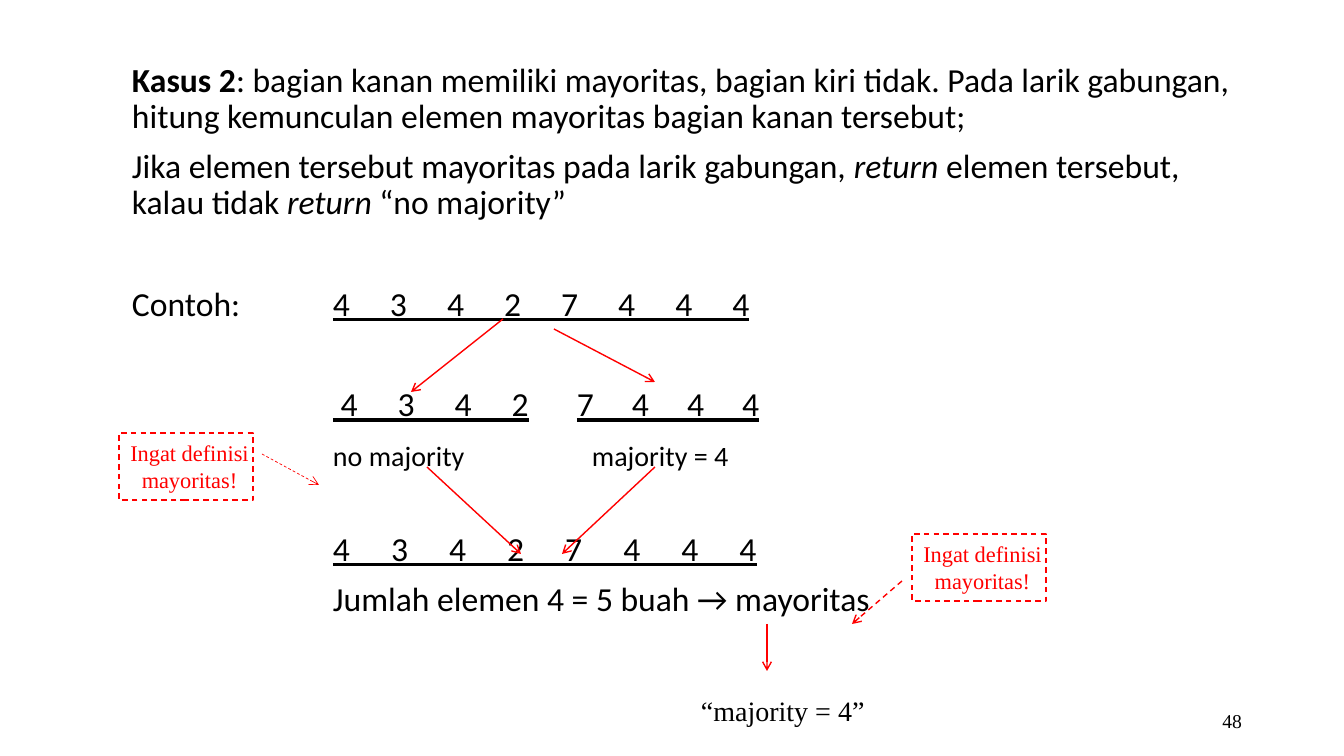
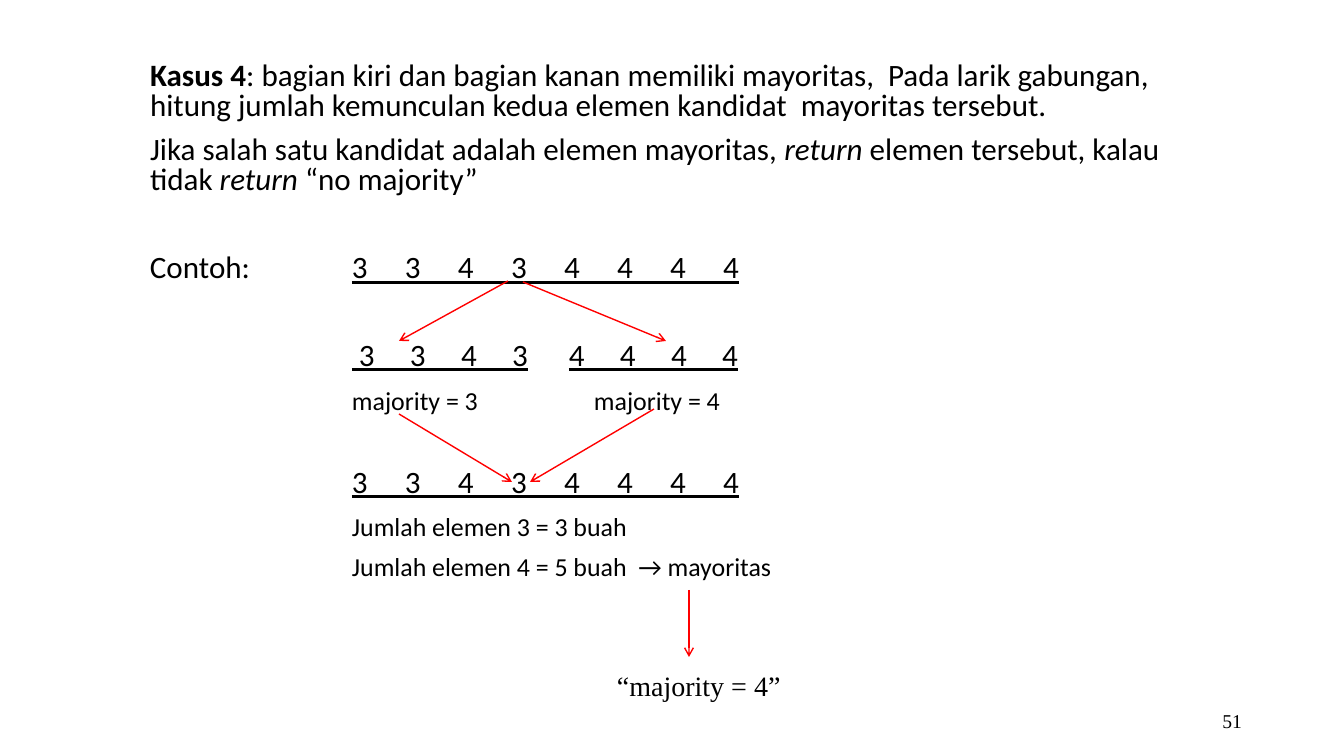
from lxml.etree import SubElement
from pptx import Presentation
from pptx.dml.color import RGBColor
from pptx.enum.dml import MSO_LINE
from pptx.enum.shapes import MSO_CONNECTOR, MSO_SHAPE
from pptx.enum.text import MSO_ANCHOR, MSO_AUTO_SIZE, PP_ALIGN
from pptx.oxml.ns import qn
from pptx.util import Emu, Pt

PX_PER_INCH = 100.8
BLACK, RED = "000000", "FF0000"
BODY_FONT, NOTE_FONT = "Calibri", "Times New Roman"
INSET = 10              # left inset of the text boxes
PARAGRAPH_GAP = 10      # points
LINE_HEIGHT = 1.2       # Calibri line height, in font sizes
DIGIT_AND_SPACE = 0.73  # width of a digit and a space, in font sizes


def px(value):
    return Emu(round(value * 914400 / PX_PER_INCH))


def style(font, name, size, color):
    font.name, font.size = name, Pt(size)
    font.color.rgb = RGBColor.from_string(color)


# Rows: (size of a blank line's height left above, or 0, runs).
# A run is (text, mark, size), where the mark is b, i, u, nothing,
# or the distance in px between the digits of an underlined array.
slides = [
    dict(
        number="48", text_left=132, right=1252, spacing=0.9,
        array_left=333, half_left=577, label_left=592, example_top=282,
        intro=[
            (0, [("Kasus 2", "b", 24),
                 (": bagian kanan memiliki mayoritas, bagian kiri tidak. Pada larik gabungan, "
                  "hitung kemunculan elemen mayoritas bagian kanan tersebut;", "", 24)]),
            (0, [("Jika elemen tersebut mayoritas pada larik gabungan, ", "", 24),
                 ("return ", "i", 24), ("elemen tersebut, kalau tidak ", "", 24),
                 ("return", "i", 24), (" “no majority”", "", 24)]),
        ],
        example=[
            (0, [("Contoh:\t", "", 24), ("4 3 4 2 7 4 4 4", 57, 24)]),
            (24, [("\t", "", 24), (" ", "u", 24), ("4 3 4 2", 57, 24),
                  ("\t", "", 24), ("7 4 4 4", 55, 24)]),
            (0, [("\t", "", 24), ("no majority\tmajority = 4", "", 20)]),
            (20, [("\t", "", 20), ("4 3 4 2 7 4 4 4", 58, 24)]),
            (0, [("\tJumlah elemen 4 = 5 buah → mayoritas", "", 24)]),
        ],
        arrows=[(503, 319, 411, 392), (554, 329, 655, 382), (427, 467, 521, 554),
                (655, 467, 562, 554), (767, 624, 767, 671)],
        dashed_arrows=[(902, 581, 852, 624, 1), (262, 454, 319, 485, 0.5)],
        notes=[(912, 534), (119, 433)],
        result=(691, 688),
    ),
    dict(
        number="51", text_left=150, right=1213, spacing=0.8,
        array_left=352, half_left=569, label_left=594, example_top=250,
        intro=[
            (0, [("Kasus 4", "b", 22.2),
                 (": bagian kiri dan bagian kanan memiliki mayoritas,  Pada larik gabungan, "
                  "hitung jumlah kemunculan kedua elemen kandidat  mayoritas tersebut.", "", 22.2)]),
            (0, [("Jika salah satu kandidat adalah elemen mayoritas, ", "", 22.2),
                 ("return ", "i", 22.2), ("elemen tersebut, kalau tidak ", "", 22.2),
                 ("return", "i", 22.2), (" “no majority”", "", 22.2)]),
        ],
        example=[
            (0, [("Contoh:\t", "", 22.2), ("3 3 4 3 4 4 4 4", 53, 22.2)]),
            (22.2, [("\t", "", 22.2), (" ", "u", 22.2), ("3 3 4 3", 51, 22.2),
                    ("\t", "", 22.2), ("4 4 4 4", 51, 22.2)]),
            (0, [("\t", "", 22.2), ("majority = 3\tmajority = 4", "", 18.5)]),
            (18.5, [("\t", "", 18.5), ("3 3 4 3 4 4 4 4", 53, 22.2)]),
            (0, [("\t", "", 22.2), ("Jumlah elemen 3 = 3 buah", "", 18.5)]),
            (0, [("\tJumlah elemen 4 = 5 buah  → mayoritas", "", 18.5)]),
        ],
        arrows=[(508, 281, 399, 341), (523, 282, 666, 341), (399, 414, 512, 482),
                (654, 409, 530, 482), (689, 590, 689, 657)],
        dashed_arrows=[],
        notes=[],
        result=(607, 663),
    ),
]

presentation = Presentation()
presentation.slide_width, presentation.slide_height = px(1344), px(756)

for content in slides:
    slide = presentation.slides.add_slide(presentation.slide_layouts[1])
    title = slide.shapes.title
    title.element.getparent().remove(title.element)

    # Explanation in the body placeholder, worked example below it
    left = content["text_left"] - INSET
    width = content["right"] - left
    body = slide.placeholders[1]
    body.left, body.top, body.width, body.height = px(left), px(58), px(width), px(180)
    example = slide.shapes.add_textbox(px(left), px(content["example_top"]), px(width), px(360))
    for box, rows in ((body, content["intro"]), (example, content["example"])):
        frame = box.text_frame
        frame.word_wrap = True
        frame.auto_size = MSO_AUTO_SIZE.NONE
        frame.margin_left = frame.margin_right = px(INSET)
        for index, (blank_size, runs) in enumerate(rows):
            paragraph = frame.paragraphs[0] if index == 0 else frame.add_paragraph()
            properties = paragraph._p.get_or_add_pPr()
            if box is body:
                properties.set("marL", "0")
                properties.set("indent", "0")
                SubElement(properties, qn("a:buNone"))
            else:
                is_label = any("majority = " in text for text, _, _ in runs)
                second_stop = content["label_left" if is_label else "half_left"]
                tabs = SubElement(properties, qn("a:tabLst"))
                for stop in (content["array_left"], second_stop):
                    SubElement(tabs, qn("a:tab"), pos=str(px(stop - content["text_left"])), algn="l")
            paragraph.line_spacing = content["spacing"]
            gap = PARAGRAPH_GAP
            if blank_size:
                gap += blank_size * LINE_HEIGHT * content["spacing"] + PARAGRAPH_GAP
            paragraph.space_before = Pt(gap if index else 0)
            for text, mark, size in runs:
                run = paragraph.add_run()
                run.text = text
                style(run.font, BODY_FONT, size, BLACK)
                run.font.bold = mark == "b"
                run.font.italic = mark == "i"
                run.font.underline = mark == "u" or isinstance(mark, int)
                if isinstance(mark, int):
                    tracking = (px(mark).pt - DIGIT_AND_SPACE * size) / 2
                    run.font._element.set("spc", str(round(tracking * 100)))

    # Slide number and result
    result_left, result_top = content["result"]
    for text, x, y, width, height, size, align in (
        (content["number"], 950, 701, 302, 40, 14, PP_ALIGN.RIGHT),
        ("“majority = 4”", result_left, result_top, 185, 44, 20, PP_ALIGN.LEFT),
    ):
        box = slide.shapes.add_textbox(px(x), px(y), px(width), px(height))
        box.text_frame.word_wrap = True
        box.text_frame.vertical_anchor = MSO_ANCHOR.MIDDLE
        box.text_frame.text = text
        paragraph = box.text_frame.paragraphs[0]
        paragraph.alignment = align
        style(paragraph.runs[0].font, NOTE_FONT, size, BLACK)

    # Dashed reminders
    for x, y in content["notes"]:
        note = slide.shapes.add_shape(MSO_SHAPE.RECTANGLE, px(x), px(y), px(134), px(67))
        note.shadow.inherit = False
        note.fill.background()
        note.line.color.rgb = RGBColor.from_string(RED)
        note.line.width = Pt(1)
        note.line.dash_style = MSO_LINE.DASH
        frame = note.text_frame
        frame.word_wrap = False
        frame.margin_left, frame.margin_right = px(7), 0
        frame.vertical_anchor = MSO_ANCHOR.MIDDLE
        frame.text = "Ingat definisi\nmayoritas!"
        for paragraph in frame.paragraphs:
            paragraph.alignment = PP_ALIGN.CENTER
            style(paragraph.runs[0].font, NOTE_FONT, 16, RED)

    # Arrows
    solid = [(*ends, 1, False) for ends in content["arrows"]]
    dashed = [(*arrow, True) for arrow in content["dashed_arrows"]]
    for x1, y1, x2, y2, width, is_dashed in solid + dashed:
        arrow = slide.shapes.add_connector(MSO_CONNECTOR.STRAIGHT, px(x1), px(y1), px(x2), px(y2))
        arrow.line.color.rgb = RGBColor.from_string(RED)
        arrow.line.width = Pt(width)
        if is_dashed:
            arrow.line.dash_style = MSO_LINE.DASH
        SubElement(arrow.line._get_or_add_ln(), qn("a:tailEnd"), type="arrow")
        SubElement(arrow._element.spPr, qn("a:effectLst"))

presentation.save("out.pptx")
